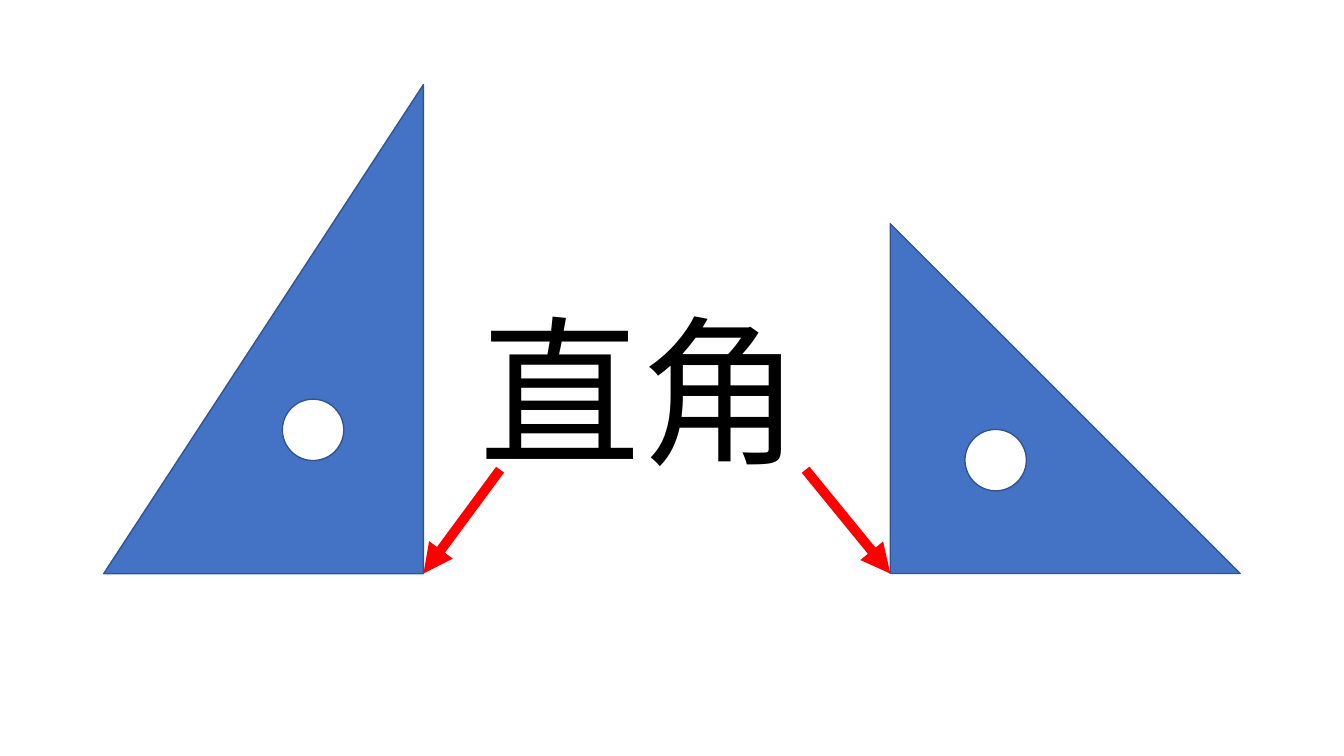
from dataclasses import dataclass

from lxml import etree
from pptx import Presentation
from pptx.dml.color import RGBColor
from pptx.enum.shapes import MSO_CONNECTOR, MSO_SHAPE
from pptx.oxml.ns import qn
from pptx.slide import Slide
from pptx.util import Inches, Pt

TRIANGLE = MSO_SHAPE.RIGHT_TRIANGLE
CIRCLE = MSO_SHAPE.OVAL
STRAIGHT = MSO_CONNECTOR.STRAIGHT

COLORS = {
    "set_square": "4472C4",
    "outline": "325491",
    "hole": "FFFFFF",
    "arrow": "FF0000",
    "label": "000000",
}
FONT = "Noto Sans CJK JP"
BASELINE = 5.69
HOLE_SIZE = 0.61
ARROW_TOP = 4.66


@dataclass
class SetSquare:
    """A drafting triangle, its hole and the arrow to its right angle."""
    left: float
    width: float
    height: float
    hole_left: float
    hole_top: float
    arrow_start: float
    right_angle_on_right: bool

    @property
    def corner(self) -> float:
        return self.left + self.width if self.right_angle_on_right else self.left


SET_SQUARES = [
    SetSquare(1.03, 3.17, 4.85, 2.8, 3.96, 4.96, True),
    SetSquare(8.83, 3.47, 3.47, 9.57, 4.26, 7.99, False),
]


def color(name: str) -> RGBColor:
    return RGBColor.from_string(COLORS[name])


def add_outlined_shape(slide: Slide, preset: MSO_SHAPE, left: float, top: float,
                       width: float, height: float, fill: str, flipped: bool = False) -> None:
    shape = slide.shapes.add_shape(
        preset, Inches(left), Inches(top), Inches(width), Inches(height))
    shape.shadow.inherit = False
    shape.fill.solid()
    shape.fill.fore_color.rgb = color(fill)
    shape.line.color.rgb = color("outline")
    shape.line.width = Pt(1)
    if flipped:
        shape.element.spPr.find(qn("a:xfrm")).set("flipH", "1")


def add_arrow(slide: Slide, square: SetSquare) -> None:
    arrow = slide.shapes.add_connector(
        STRAIGHT, Inches(square.arrow_start), Inches(ARROW_TOP),
        Inches(square.corner), Inches(BASELINE))
    arrow.line.color.rgb = color("arrow")
    arrow.line.width = Pt(7)
    etree.SubElement(arrow.line._get_or_add_ln(), qn("a:tailEnd"), type="triangle")
    etree.SubElement(arrow.element.spPr, qn("a:effectLst"))


def add_set_square(slide: Slide, square: SetSquare) -> None:
    add_outlined_shape(slide, TRIANGLE, square.left, BASELINE - square.height,
                       square.width, square.height, "set_square",
                       square.right_angle_on_right)
    add_outlined_shape(slide, CIRCLE, square.hole_left, square.hole_top,
                       HOLE_SIZE, HOLE_SIZE, "hole")
    add_arrow(slide, square)


def add_label(slide: Slide) -> None:
    label = slide.shapes.add_textbox(Inches(4.66), Inches(2.84), Inches(6.65), Inches(2.04))
    label.text_frame.word_wrap = True
    label.text_frame.text = "直角"
    run = label.text_frame.paragraphs[0].runs[0]
    run.font.size = Pt(115)
    run.font.name = FONT
    run.font.color.rgb = color("label")
    etree.SubElement(run.font._element, qn("a:ea"), typeface=FONT)


def main() -> None:
    presentation = Presentation()
    presentation.slide_width = Inches(13.33)
    presentation.slide_height = Inches(7.5)
    slide = presentation.slides.add_slide(presentation.slide_layouts[6])
    for square in SET_SQUARES:
        add_set_square(slide, square)
    add_label(slide)
    presentation.save("out.pptx")


if __name__ == "__main__":
    main()
